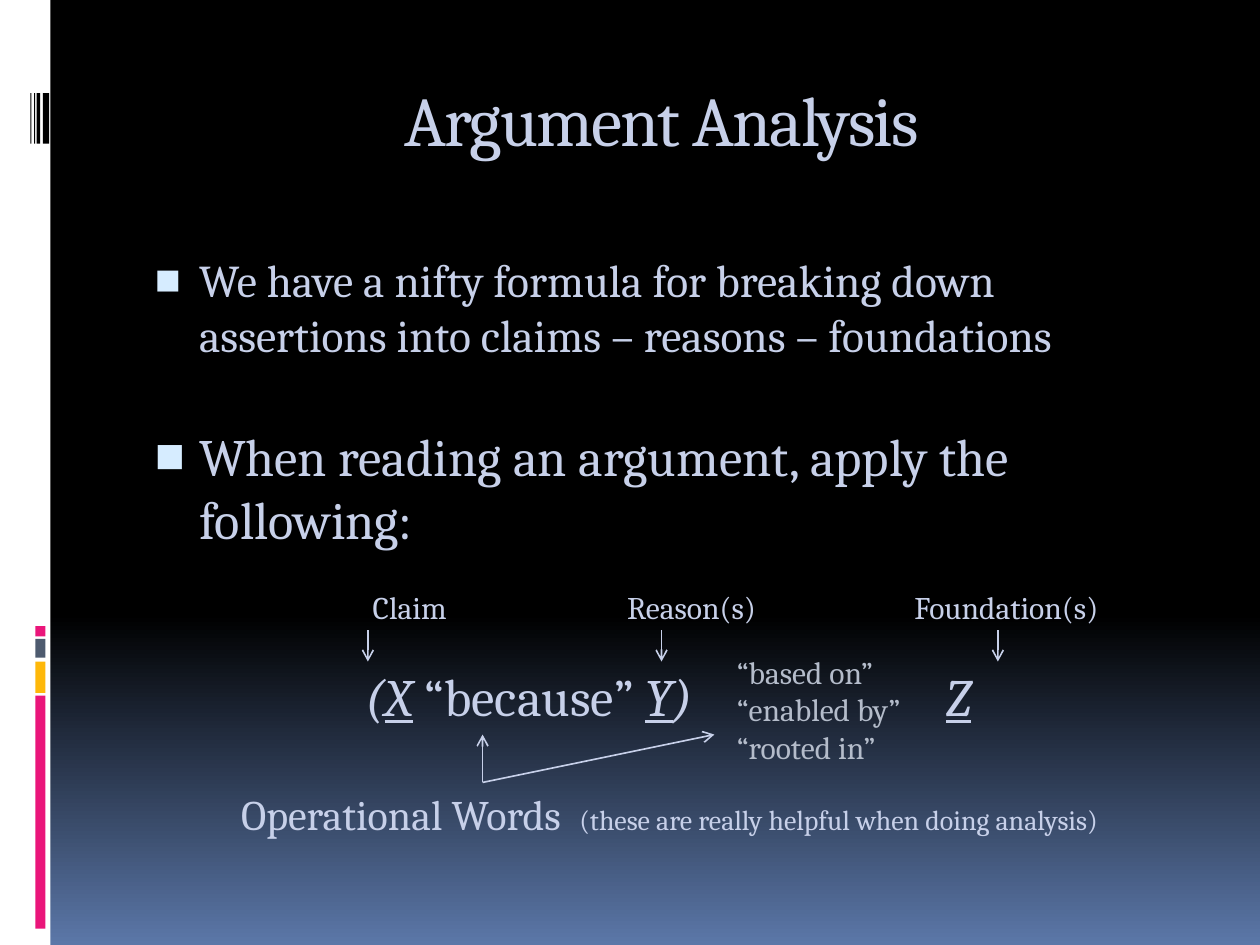
from pptx import Presentation, util as u
from pptx.dml import color as c
from pptx.enum import shapes as s, text as t
from pptx.oxml import ns
from lxml import etree

HUES = {
    "white": "FFFFFF", "black": "000000", "blue": "5B77A8", "pink": "EA157A",
    "gold": "FEB80A", "slate": "4E5B6F", "pale": "C7D0E9", "grey": "B4BCCA",
    "mark": "D6ECFF",
}


def add(parent, tag, **attrs):
    node = etree.SubElement(parent, ns.qn(tag))
    for key, value in attrs.items():
        node.set(key, str(value))
    return node


class Deck:
    """Holds the style and the current slide, and draws each kind of element."""

    face = "Cambria"

    def __init__(self):
        self.prs = Presentation()
        self.prs.slide_width, self.prs.slide_height = u.Inches(10), u.Inches(7.5)
        self.slide = self.prs.slides.add_slide(self.prs.slide_layouts[1])

    def hue(self, name):
        return c.RGBColor.from_string(HUES[name])

    def style(self, font, size, hue="pale"):
        font.name, font.size = self.face, u.Pt(size)
        font.color.rgb = self.hue(hue)

    def back(self, *stops):
        fill = self.slide.background.fill
        fill.gradient()
        fill.gradient_angle = 270
        for stop, (pos, hue) in zip(fill.gradient_stops, stops):
            stop.position, stop.color.rgb = pos, self.hue(hue)

    def bar(self, hue, *box):
        bar = self.slide.shapes.add_shape(
            s.MSO_SHAPE.RECTANGLE, *map(u.Inches, box))
        bar.shadow.inherit = False
        bar.fill.solid()
        bar.fill.fore_color.rgb = self.hue(hue)
        bar.line.fill.background()

    def hold(self, index, *box):
        holder = self.slide.placeholders[index]
        holder.left, holder.top, holder.width, holder.height = map(u.Inches, box)
        frame = holder.text_frame
        frame.auto_size = t.MSO_AUTO_SIZE.NONE
        frame.vertical_anchor = t.MSO_ANCHOR.TOP
        return frame

    def title(self, words, *box):
        par = self.hold(0, *box).paragraphs[0]
        par.alignment = t.PP_ALIGN.CENTER
        self.style(par.font, 40)
        self.run(par, words).font._element.set("spc", "-100")

    def par(self, frame, size, gap, left, hang=0):
        par = frame.paragraphs[0]
        if par.runs:
            par = frame.add_paragraph()
        par.space_before = u.Pt(gap)
        props = par._p.get_or_add_pPr()
        props.set("marL", str(u.Inches(left)))
        props.set("indent", str(u.Inches(hang)))
        if hang:
            add(add(props, "a:buClr"), "a:srgbClr", val=HUES["mark"])
            add(props, "a:buSzPct", val=95000)
            add(props, "a:buChar", char="■")
        else:
            add(props, "a:buNone")
        self.style(par.font, size)
        return par

    def run(self, par, words, size=None, slant=None, under=None):
        run = par.add_run()
        run.text = words
        run.font.italic, run.font.underline = slant, under
        if size:
            run.font.size = u.Pt(size)
        return run

    def note(self, lines, size, hue, *box):
        frame = self.slide.shapes.add_textbox(*map(u.Inches, box)).text_frame
        frame.word_wrap = True
        frame.text = "\n".join(lines)
        for par in frame.paragraphs:
            self.style(par.font, size, hue)
        return frame.paragraphs[0]

    def arrow(self, *ends):
        line = self.slide.shapes.add_connector(
            s.MSO_CONNECTOR.STRAIGHT, *map(u.Inches, ends))
        line.line.color.rgb = self.hue("pale")
        line.line.width = u.Pt(0.94)
        add(line.line._get_or_add_ln(), "a:tailEnd", type="arrow")
        add(line._element.spPr, "a:effectLst")


def main():
    deck = Deck()
    deck.back((0.65, "black"), (1, "blue"))
    deck.bar("white", 0, 0, 0.4, 7.5)
    for hue, top, tall in (("pink", 5.52, 1.85), ("gold", 5.25, 0.25),
                           ("slate", 5.07, 0.15), ("pink", 4.97, 0.08)):
        deck.bar(hue, 0.28, top, 0.08, tall)
    for left, wide in ((0.34, 0.05), (0.29, 0.03), (0.27, 0.01), (0.24, 0.01)):
        deck.bar("black", left, 0.74, wide, 0.4)

    deck.title("Argument Analysis", 1, 0.56, 8.5, 1)
    body = deck.hold(1, 1, 1.95, 8.5, 5)
    for words, size, gap in (
            ("We have a nifty formula for breaking down assertions into "
             "claims – reasons – foundations", 26, 0),
            ("When reading an argument, apply the following:", 30, 36)):
        deck.run(deck.par(body, size, gap, 0.48, -0.35), words)
    foot = deck.par(body, 24, 136, 0.13)
    foot.alignment = t.PP_ALIGN.CENTER
    deck.run(foot, "Operational Words  ")
    deck.run(foot, "(these are really helpful when doing analysis)", 16)

    for word, left, mid in (("Claim", 2.86, 2.92), ("Reason(s)", 4.88, 5.25),
                            ("Foundation(s)", 7.16, 7.92)):
        deck.note([word], 18, "pale", left, 4.62, 1.8, 0.4)
        deck.arrow(mid, 5, mid, 5.25)
    for left, wide, parts in (
            (2.8, 2.95, (("(", True, None), ("X", True, True),
                         (" “because” ", None, None), ("Y", True, True),
                         (")", True, None))),
            (7.41, 0.6, (("Z", True, True),))):
        rule = deck.note([], 30, "pale", left, 5.22, wide, 0.6)
        for words, slant, under in parts:
            deck.run(rule, words, slant=slant, under=under)
    deck.note(("“based on”", "“enabled by”", "“rooted in”"), 18, "grey",
              5.75, 5.13, 1.79, 1.01)
    for tip in (3.83, 5.67):
        deck.arrow(3.83, 6.21, tip, 5.83)
    deck.prs.save("out.pptx")


if __name__ == "__main__":
    main()
